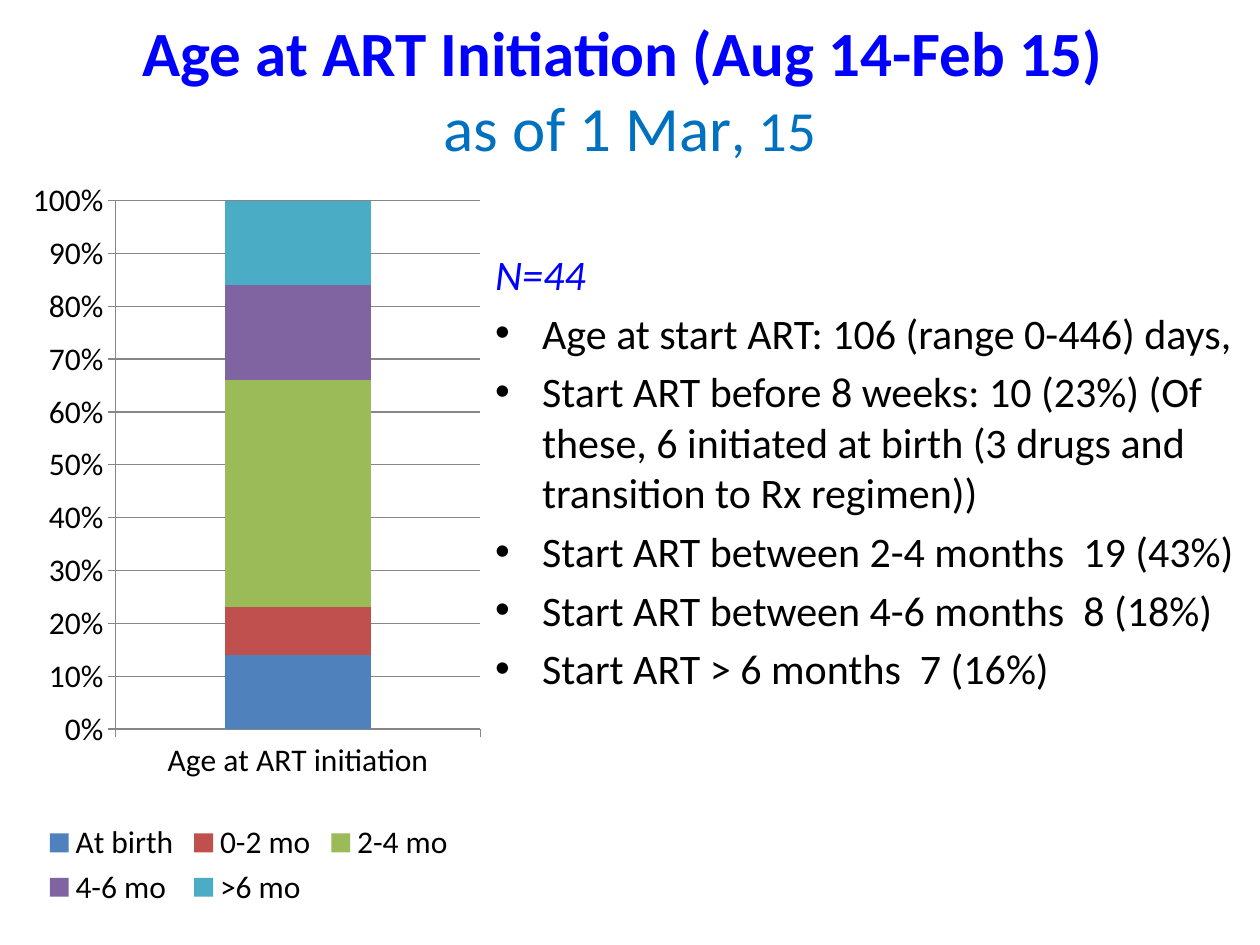
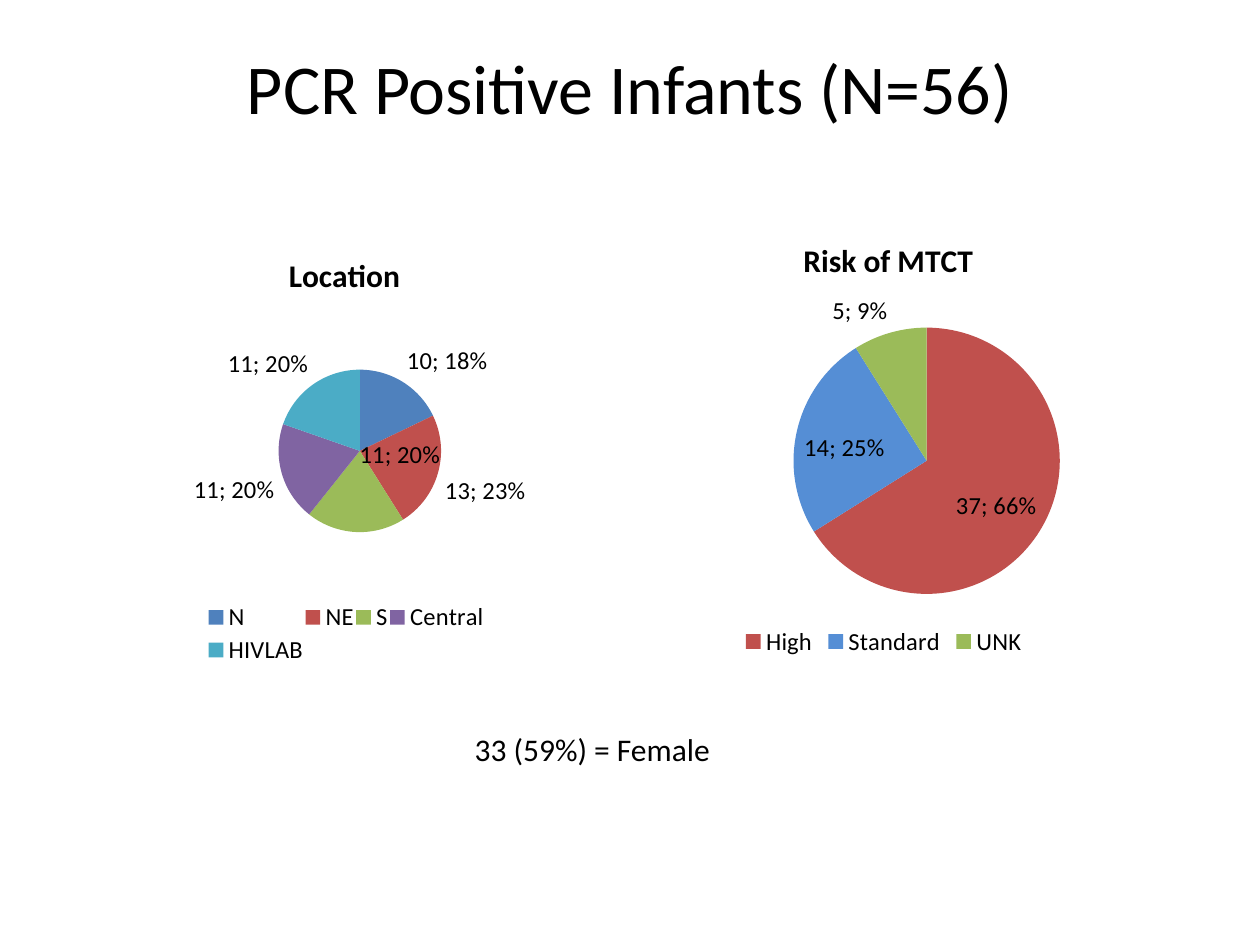
from lxml import etree
from pptx import Presentation
from pptx import util as u
from pptx.chart.data import CategoryChartData
from pptx.dml.color import RGBColor
from pptx.enum import chart as ce
from pptx.enum import text
from pptx.oxml.ns import qn

FONT = "Calibri"
HUES = {
    "black": "000000", "title": "0000FF", "date": "0070C0", "grid": "868686",
    "blue": "4F81BD", "red": "C0504D", "green": "9BBB59",
    "violet": "8064A2", "teal": "4BACC6", "sky": "558ED5",
}
FIVE = ["blue", "red", "green", "violet", "teal"]
POS = ce.XL_LABEL_POSITION


def rgb(hue):
    return RGBColor.from_string(HUES[hue])


def style(font, size, hue="black", bold=False, italic=False):
    font.name, font.size = FONT, u.Pt(size)
    font.bold, font.italic = bold, italic
    font.color.rgb = rgb(hue)


def paint(part, hue):
    part.format.fill.solid()
    part.format.fill.fore_color.rgb = rgb(hue)


# Text
def add_box(slide, box, lines):
    frame = slide.shapes.add_textbox(*map(u.Cm, box)).text_frame
    frame.word_wrap = True
    frame.text = "\n".join(lines)
    return frame


def add_title(slide, box, words, size, hue="black", bold=False):
    frame = add_box(slide, box, [words])
    frame.vertical_anchor = text.MSO_ANCHOR.MIDDLE
    para = frame.paragraphs[0]
    para.alignment = text.PP_ALIGN.CENTER
    for run in para.runs:
        style(run.font, size, hue, bold)
    return para


def add_bullet(para, indent):
    props = para._p.get_or_add_pPr()
    props.set("marL", str(indent))
    props.set("indent", str(-indent))
    etree.SubElement(props, qn("a:buFont")).set("typeface", "Arial")
    etree.SubElement(props, qn("a:buChar")).set("char", "•")


def add_list(slide, box, head, items):
    frame = add_box(slide, box, [head, *items])
    for num, para in enumerate(frame.paragraphs):
        para.space_before = u.Pt(4.8)
        if num:
            add_bullet(para, u.Cm(0.95))
            style(para.runs[0].font, 24)
        else:
            style(para.runs[0].font, 24, "title", italic=True)


# Charts
def place(part, index, inner=False, edge=True, **spots):
    """Give a chart part a manual layout in shares of the chart's size."""
    for old in part.findall(qn("c:layout")):
        part.remove(old)
    layout = etree.Element(qn("c:layout"))
    manual = etree.SubElement(layout, qn("c:manualLayout"))
    pairs = [("layoutTarget", "inner")] if inner else []
    pairs += [("xMode", "edge"), ("yMode", "edge")] if edge else []
    for tag, val in pairs + list(spots.items()):
        etree.SubElement(manual, qn("c:" + tag)).set("val", str(val))
    part.insert(index, layout)


def add_chart(slide, kind, box, cats, series, plot):
    data = CategoryChartData()
    data.categories = cats
    for name, vals in series:
        data.add_series(name, vals)
    chart = slide.shapes.add_chart(kind, *map(u.Cm, box), data).chart
    style(chart.font, 18)
    chart.has_title = False
    chart.has_legend = True
    chart.legend.position = ce.XL_LEGEND_POSITION.BOTTOM
    chart.legend.include_in_layout = False
    x, y, w, h = plot
    area = chart._chartSpace.find(".//" + qn("c:plotArea"))
    place(area, 0, inner=True, x=x, y=y, w=w, h=h)
    return chart


def add_stack(slide, box, cat, series, plot):
    parts = [(name, [val]) for name, val in series]
    chart = add_chart(slide, ce.XL_CHART_TYPE.COLUMN_STACKED, box, [cat], parts, plot)
    bars = chart.plots[0]
    bars.gap_width, bars.overlap = 150, 100
    for part, hue in zip(bars.series, FIVE):
        paint(part, hue)
    axis = chart.value_axis
    axis.minimum_scale, axis.maximum_scale, axis.major_unit = 0, 1, 0.1
    axis.tick_labels.number_format = "0%"
    axis.tick_labels.number_format_is_linked = False
    axis.major_gridlines.format.line.color.rgb = rgb("grid")
    for each in (axis, chart.category_axis):
        each.major_tick_mark = ce.XL_TICK_MARK.OUTSIDE
        each.format.line.color.rgb = rgb("grid")


def add_pie(slide, box, title, slices, hues, plot, head, spots):
    cats, vals = zip(*slices)
    chart = add_chart(slide, ce.XL_CHART_TYPE.PIE, box, cats, [(title, vals)], plot)
    chart.has_title = True
    frame = chart.chart_title.text_frame
    frame.text = title
    style(frame.paragraphs[0].runs[0].font, 18, bold=True)
    place(chart.chart_title._element, 1, x=head[0], y=head[1])
    style(chart.legend.font, 14)

    pie = chart.plots[0]
    pie.vary_by_categories = True
    pie.has_data_labels = True
    series = pie.series[0]
    labels = series.data_labels
    labels.show_value = labels.show_percentage = True
    style(labels.font, 14)
    for num, (hue, spot) in enumerate(zip(hues, spots)):
        point = series.points[num]
        paint(point, hue)
        point.data_label.position = spot
        style(point.data_label.font, 14)
    for label in series._element.iter(qn("c:dLbl")):
        label.find(qn("c:showPercent")).set("val", "1")
        etree.SubElement(label, qn("c:separator")).text = "; "
    return chart


# Slides
def build_age(slide):
    para = add_title(slide, (1.27, 0.2, 22.86, 3.18),
                     "Age at ART Initiation (Aug 14-Feb 15) \vas of 1 Mar",
                     36, "title", True)
    style(para.runs[1].font, 36, "date")
    year = para.add_run()
    year.text = ", 15"
    style(year.font, 32.4, "date")
    add_list(slide, (9.73, 4.88, 15.44, 12.57), "N=44", [
        "Age at start ART: 106 (range 0-446) days,",
        "Start ART before 8 weeks: 10 (23%) (Of these, 6 initiated at birth "
        "(3 drugs and transition to Rx regimen))",
        "Start ART between 2-4 months  19 (43%)",
        "Start ART between 4-6 months  8 (18%)",
        "Start ART > 6 months  7 (16%)",
    ])
    add_stack(slide, (0.05, 3.6, 9.93, 14.8), "Age at ART initiation", [
        ("At birth", 0.14), ("0-2 mo", 0.09), ("2-4 mo", 0.43),
        ("4-6 mo", 0.18), (">6 mo", 0.16),
    ], (0.23, 0.03, 0.74, 0.72))


def build_pcr(slide):
    add_title(slide, (1.27, 0.64, 22.86, 2.2), "PCR Positive Infants (N=56)", 40)
    site = add_pie(
        slide, (2.34, 4.45, 9.1, 9.1), "Location",
        [("N", 10), ("NE", 13), ("S", 11), ("Central", 11), ("HIVLAB", 11)],
        FIVE, (0.36, 0.33, 0.36, 0.36), (0.37, 0.06), [POS.OUTSIDE_END] * 5)
    place(site.legend._element, 1, x=0.2, y=0.84, w=0.62, h=0.15)
    south = list(site._chartSpace.iter(qn("c:dLbl")))[2]
    place(south, 1, edge=False, x=0.1, y=-0.22)
    add_pie(
        slide, (13, 4.24, 9.63, 9.1), "Risk of MTCT",
        [("High", 37), ("Standard", 14), ("UNK", 5)],
        ["red", "sky", "green"], (0.31, 0.26, 0.56, 0.59), (0.32, 0.05),
        [POS.INSIDE_END, POS.INSIDE_END, POS.OUTSIDE_END])
    note = add_box(slide, (9.32, 14.6, 9.1, 1.02), ["33 (59%) = Female"])
    style(note.paragraphs[0].runs[0].font, 18)


def main():
    deck = Presentation()
    deck.slide_width, deck.slide_height = u.Cm(25.4), u.Cm(19.05)
    for build in (build_age, build_pcr):
        build(deck.slides.add_slide(deck.slide_layouts[6]))
    deck.save("out.pptx")


if __name__ == "__main__":
    main()
